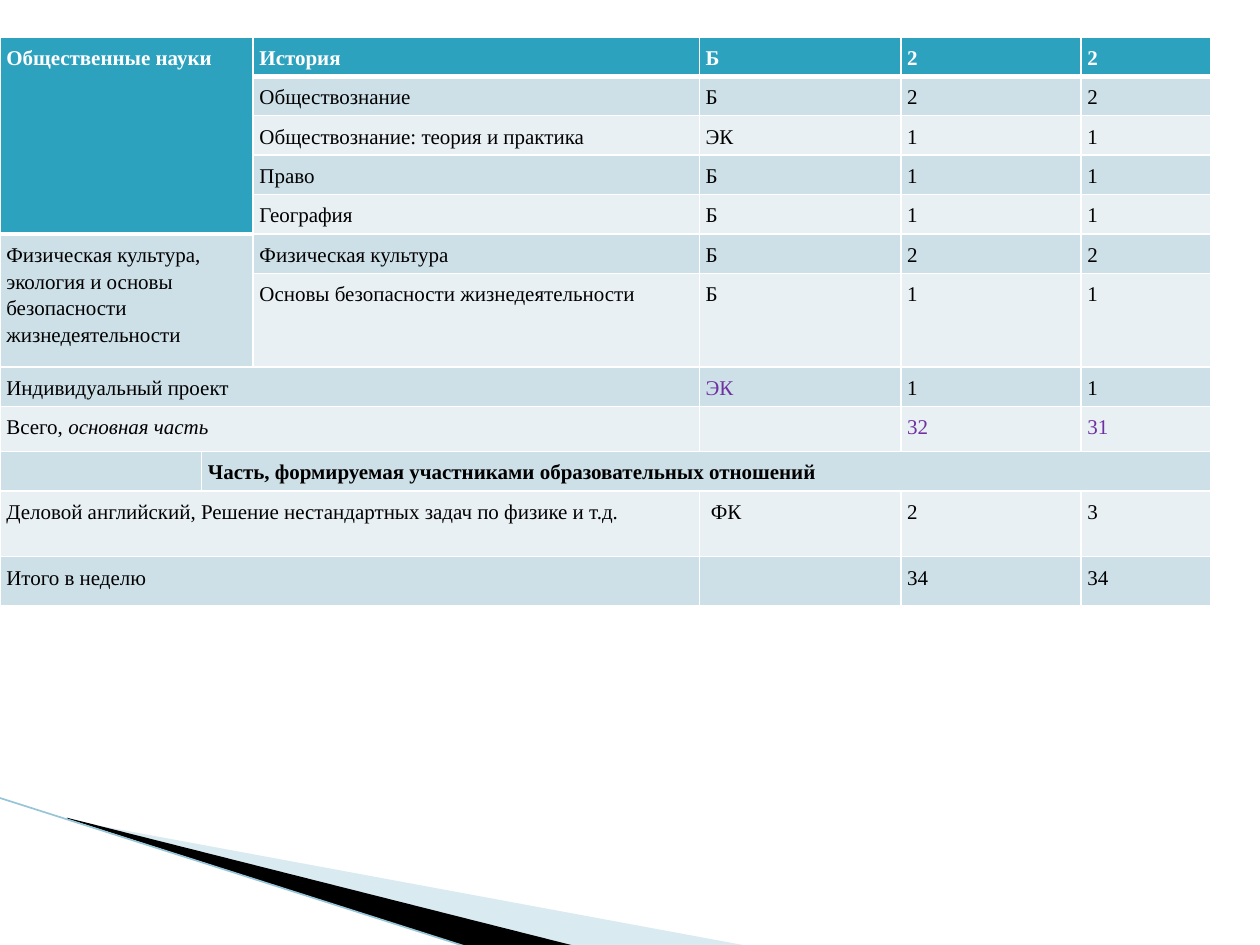
from dataclasses import dataclass

from pptx import Presentation
from pptx.dml.color import RGBColor
from pptx.enum.shapes import MSO_CONNECTOR
from pptx.oxml.xmlchemy import OxmlElement
from pptx.util import Pt

STRAIGHT = MSO_CONNECTOR.STRAIGHT
FONT = "Times New Roman"
TEXT_SIZE = 12
MARGIN = 3.6
WHITE, BLACK, PURPLE = "FFFFFF", "000000", "7030A0"
HEADER_FILL = "2DA2BF"
BAND_FILLS = ("E8F0F4", "CDE0E8")

COLUMN_WIDTHS = (115.2, 29.5, 254.9, 115.2, 103, 74.2)
ROW_HEIGHTS = (22.5,) * 6 + (53.5, 22.5, 25.7, 22.5, 37.7, 28)


@dataclass
class Entry:
    row: int
    col: int
    text: str
    color: str = BLACK
    bold: bool = False
    italic_tail: str = ""
    rows: int = 1
    cols: int = 1


@dataclass
class Ribbon:
    points: tuple
    color: str
    opacity: int = 100


RIBBONS = (
    Ribbon(((39.6, 468.7), (428.4, 540.7), (328.3, 540.7), (39.6, 468)), "A0CBDC", 40),
    Ribbon(((38.2, 467.3), (329, 540.7), (267.8, 541.4), (38.9, 468)), BLACK),
)

# Subject, level and weekly hours in the two grades
SUBJECTS = (
    ("История", "Б", "2", "2"),
    ("Обществознание", "Б", "2", "2"),
    ("Обществознание: теория и практика", "ЭК", "1", "1"),
    ("Право", "Б", "1", "1"),
    ("География", "Б", "1", "1"),
    ("Физическая культура", "Б", "2", "2"),
    ("Основы безопасности жизнедеятельности", "Б", "1", "1"),
)
ENTRIES = [
    Entry(row, col, text, WHITE if row == 0 else BLACK, row == 0)
    for row, subject in enumerate(SUBJECTS)
    for col, text in enumerate(subject, start=2)
] + [
    Entry(0, 0, "Общественные науки", WHITE, True, rows=5, cols=2),
    Entry(5, 0, "Физическая культура, экология и основы безопасности "
                "жизнедеятельности", rows=2, cols=2),
    Entry(7, 0, "Индивидуальный проект", cols=3),
    Entry(7, 3, "ЭК", PURPLE),
    Entry(7, 4, "1"),
    Entry(7, 5, "1"),
    Entry(8, 0, "Всего, ", italic_tail="основная часть", cols=3),
    Entry(8, 4, "32", PURPLE),
    Entry(8, 5, "31", PURPLE),
    Entry(9, 1, "Часть, формируемая участниками образовательных отношений",
          bold=True, cols=5),
    Entry(10, 0, "Деловой английский, Решение нестандартных задач по физике и т.д.",
          cols=3),
    Entry(10, 3, " ФК"),
    Entry(10, 4, "2"),
    Entry(10, 5, "3"),
    Entry(11, 0, "Итого в неделю", cols=3),
    Entry(11, 4, "34"),
    Entry(11, 5, "34"),
]


def rgb(value: str) -> RGBColor:
    return RGBColor.from_string(value)


def add_child(parent, tag: str, **attributes):
    child = OxmlElement(tag)
    for key, value in attributes.items():
        child.set(key, str(value))
    parent.append(child)
    return child


def draw_ribbon(slide, ribbon: Ribbon) -> None:
    start, *rest = [(Pt(x), Pt(y)) for x, y in ribbon.points]
    builder = slide.shapes.build_freeform(*start, scale=1.0)
    builder.add_line_segments(rest, close=True)
    shape = builder.convert_to_shape()
    shape.shadow.inherit = False
    shape.fill.solid()
    shape.fill.fore_color.rgb = rgb(ribbon.color)
    shape.line.fill.background()
    if ribbon.opacity < 100:
        color = shape.fill._xPr.find(".//{*}srgbClr")
        add_child(color, "a:alpha", val=ribbon.opacity * 1000)


def draw_edge(slide) -> None:
    edge = slide.shapes.add_connector(STRAIGHT, Pt(-0.7), Pt(455.8), Pt(267.8), Pt(541.4))
    edge.line.color.rgb = rgb("97C5D8")
    edge.line.width = Pt(0.95)
    add_child(edge._element.spPr, "a:effectLst")


def style_cell(cell, row: int, col: int) -> None:
    header_end = 4 if col < 2 else 0
    cell.margin_left = cell.margin_right = Pt(MARGIN)
    cell.margin_top = cell.margin_bottom = Pt(MARGIN)
    widths = {
        "L": 1,
        "R": 1,
        "T": 3 if row == header_end + 1 else 1,
        "B": 3 if row in (0, header_end) else 1,
    }
    properties = cell._tc.get_or_add_tcPr()
    for side, width in widths.items():
        border = add_child(properties, f"a:ln{side}", w=Pt(width))
        add_child(add_child(border, "a:solidFill"), "a:srgbClr", val=WHITE)
    cell.fill.solid()
    cell.fill.fore_color.rgb = rgb(HEADER_FILL if row <= header_end else BAND_FILLS[row % 2])


def write_entry(cell, entry: Entry) -> None:
    cell.text_frame.text = entry.text
    paragraph = cell.text_frame.paragraphs[0]
    paragraph.line_spacing = 1.15
    if entry.italic_tail:
        tail = paragraph.add_run()
        tail.text = entry.italic_tail
        tail.font.italic = True
    for run in paragraph.runs:
        run.font.name = FONT
        run.font.size = Pt(TEXT_SIZE)
        run.font.bold = entry.bold
        run.font.color.rgb = rgb(entry.color)


def draw_curriculum(slide) -> None:
    table = slide.shapes.add_table(
        len(ROW_HEIGHTS), len(COLUMN_WIDTHS), Pt(0), Pt(21),
        Pt(sum(COLUMN_WIDTHS)), Pt(sum(ROW_HEIGHTS)),
    ).table
    for column, width in zip(table.columns, COLUMN_WIDTHS):
        column.width = Pt(width)
    for row, height in zip(table.rows, ROW_HEIGHTS):
        row.height = Pt(height)

    for row in range(len(ROW_HEIGHTS)):
        for col in range(len(COLUMN_WIDTHS)):
            style_cell(table.cell(row, col), row, col)
    for entry in ENTRIES:
        cell = table.cell(entry.row, entry.col)
        if entry.rows * entry.cols > 1:
            cell.merge(table.cell(entry.row + entry.rows - 1, entry.col + entry.cols - 1))
        write_entry(cell, entry)

    # Empty cells take the same text size, so that rows keep their heights
    for cell in table.iter_cells():
        if not cell.text_frame.text:
            add_child(cell.text_frame.paragraphs[0]._p, "a:endParaRPr", sz=TEXT_SIZE * 100)


def main() -> None:
    deck = Presentation()
    deck.slide_width, deck.slide_height = Pt(720), Pt(540)
    slide = deck.slides.add_slide(deck.slide_layouts[6])

    # Corner decoration
    for ribbon in RIBBONS:
        draw_ribbon(slide, ribbon)
    draw_edge(slide)

    # Curriculum table
    draw_curriculum(slide)
    deck.save("out.pptx")


if __name__ == "__main__":
    main()
